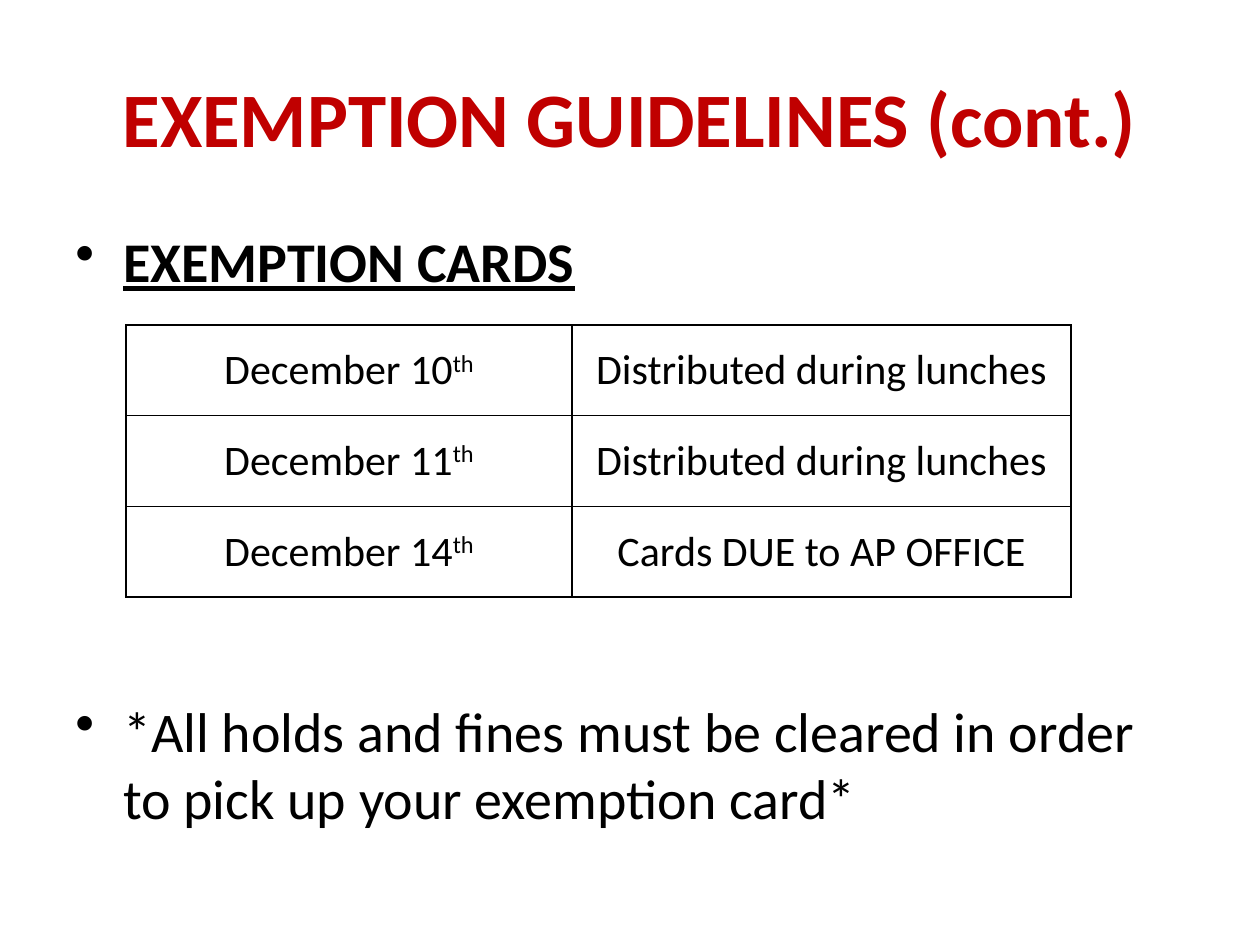
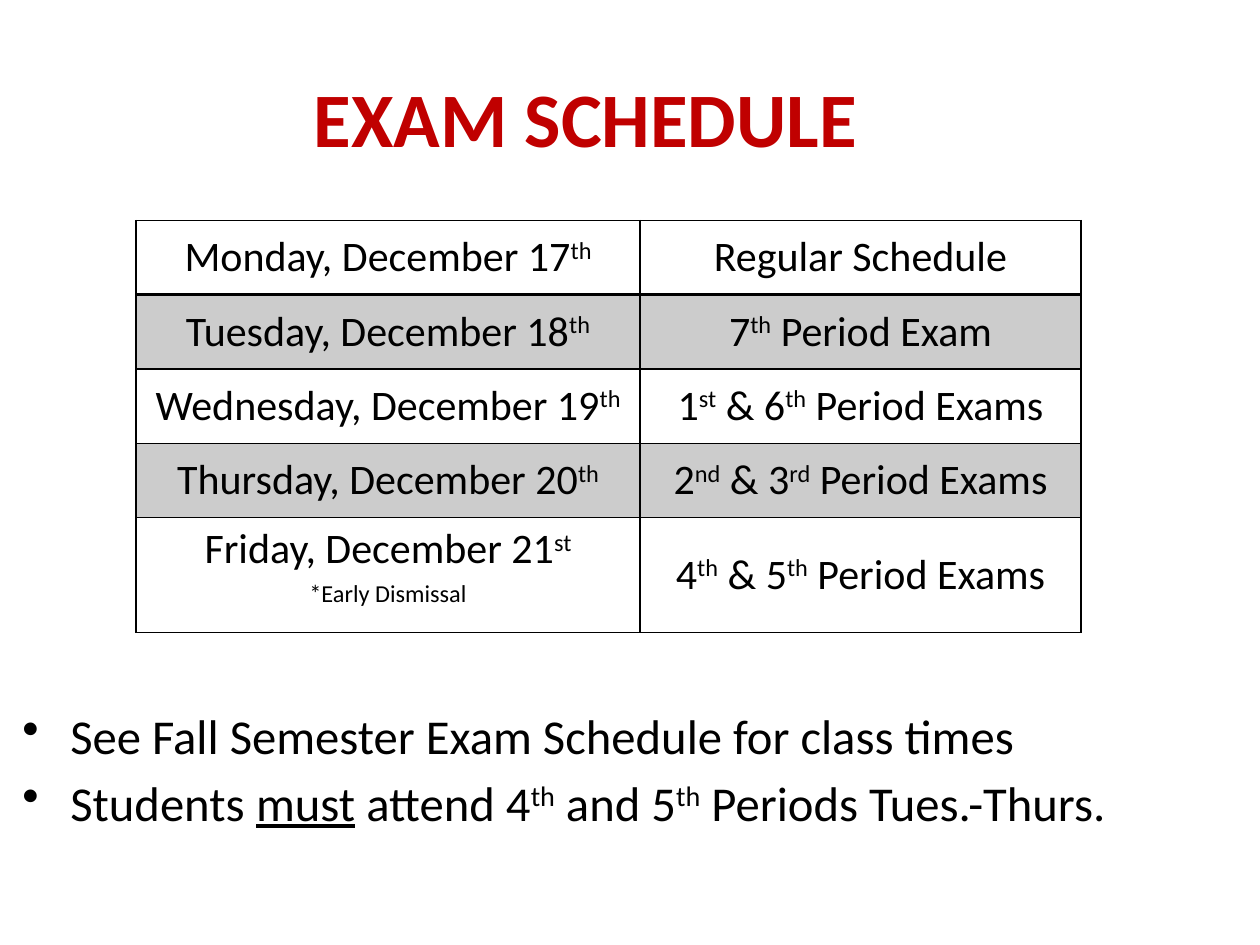
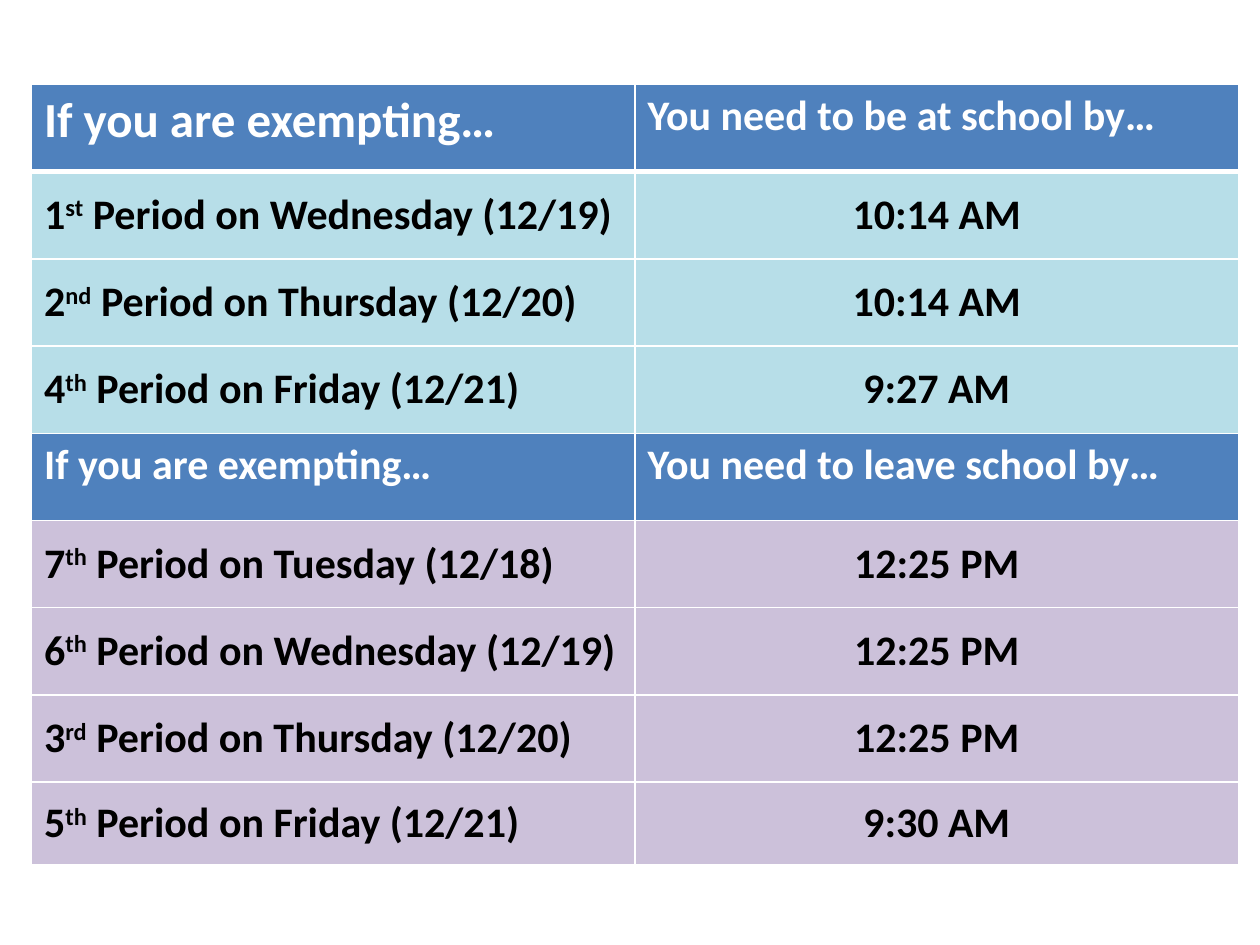
"""Build three slides on exam exemptions: card dates, exam schedule and arrival times."""
from dataclasses import dataclass

from lxml.etree import SubElement
from pptx import Presentation
from pptx.dml.color import RGBColor as RGB
from pptx.enum.text import MSO_ANCHOR as ANCHOR, PP_ALIGN as ALIGN
from pptx.oxml.ns import qn
from pptx.util import Inches, Pt


@dataclass(frozen=True)
class Theme:
    font: str = "Calibri"
    red: str = "C00000"
    black: str = "000000"
    white: str = "FFFFFF"
    grey: str = "CCCCCC"
    blue: str = "4F81BD"
    aqua: str = "B7DEE8"
    lilac: str = "CCC1DA"
    title: float = 44
    body: float = 32
    note: float = 27.8
    head: float = 28
    cell: float = 24


T = Theme()
STYLES = {"^": "superscript", "_": "underline"}

CARD_TITLE = "EXEMPTION GUIDELINES (cont.)"
CARD_BULLETS = [
    "_EXEMPTION CARDS_",
    "*All holds and fines must be cleared in order to pick up your exemption card*",
]
CARD_ROWS = [
    ("December 10^th^", "Distributed during lunches"),
    ("December 11^th^", "Distributed during lunches"),
    ("December 14^th^", "Cards DUE to AP OFFICE"),
]

EXAM_TITLE = "EXAM SCHEDULE"
EXAM_ROWS = [
    ("Monday, December 17^th^", "Regular Schedule"),
    ("Tuesday, December 18^th^", "7^th^ Period Exam"),
    ("Wednesday, December 19^th^", "1^st^ & 6^th^ Period Exams"),
    ("Thursday, December 20^th^", "2^nd^ & 3^rd^ Period Exams"),
    ("Friday, December 21^st^\n^*Early Dismissal^", "4^th^ & 5^th^ Period Exams"),
]
EXAM_BULLETS = [
    "See Fall Semester Exam Schedule for class times",
    "Students _must_ attend 4^th^ and 5^th^ Periods Tues.-Thurs.",
]

ARRIVE_ROWS = [
    ("If you are exempting…", "You need to be at school by…"),
    ("1^st^ Period on Wednesday (12/19)", "10:14 AM"),
    ("2^nd^ Period on Thursday (12/20)", "10:14 AM"),
    ("4^th^ Period on Friday (12/21)", "9:27 AM"),
]
LEAVE_ROWS = [
    ("If you are exempting…", "You need to leave school by…"),
    ("7^th^ Period on Tuesday (12/18)", "12:25 PM"),
    ("6^th^ Period on Wednesday (12/19)", "12:25 PM"),
    ("3^rd^ Period on Thursday (12/20)", "12:25 PM"),
]
LAST_ROW = [("5^th^ Period on Friday (12/21)", "9:30 AM")]


def set_font(p, size, color=T.black, bold=False):
    f = p.font
    f.name, f.size, f.bold = T.font, Pt(size), bold
    f.color.rgb = RGB.from_string(color)


def add_runs(p, text):
    """Write text, where ^ encloses superscript and _ encloses underline."""
    style, part = None, ""
    for ch in text + "\0":
        if ch not in STYLES and ch != "\0":
            part += ch
            continue
        if part:
            r = p.add_run()
            r.text = part
            if style == "underline":
                r.font.underline = True
            elif style == "superscript":
                r.font._element.set("baseline", "30000")
        style, part = (None if style else STYLES.get(ch)), ""


def fill_text(tf, text, size, color=T.black, bold=False, align=ALIGN.LEFT):
    for i, line in enumerate(text.split("\n")):
        p = tf.add_paragraph() if i else tf.paragraphs[0]
        p.alignment = align
        set_font(p, size, color, bold)
        add_runs(p, line)
    return tf.paragraphs


def add_box(s, box):
    tf = s.shapes.add_textbox(*map(Inches, box)).text_frame
    tf.word_wrap = True
    return tf


def add_title(s, text, right_inset=0.1):
    tf = add_box(s, (0.5, 0.3, 9, 1.25))
    tf.vertical_anchor = ANCHOR.MIDDLE
    tf.margin_right = Inches(right_inset)
    fill_text(tf, text, T.title, T.red, True, ALIGN.CENTER)


def add_bullets(s, box, lines, size, gap, top_inset=0.05, bold_first=False):
    tf = add_box(s, box)
    tf.margin_top = Inches(top_inset)
    for i, p in enumerate(fill_text(tf, "\n".join(lines), size)):
        p.font.bold = bold_first and i == 0
        if i:
            p.space_before = Pt(gap)
        pPr = p._p.get_or_add_pPr()
        pPr.set("marL", str(Inches(0.38)))
        pPr.set("indent", str(-Inches(0.38)))
        bullet = pPr.makeelement(qn("a:buChar"), {"char": "•"})
        pPr.find(qn("a:defRPr")).addprevious(bullet)


def set_borders(cell, color, top, bottom):
    tcPr = cell._tc.get_or_add_tcPr()
    for side, width in (("L", 1), ("R", 1), ("T", top), ("B", bottom)):
        ln = SubElement(tcPr, qn(f"a:ln{side}"), w=str(Pt(width)))
        fill = SubElement(ln, qn("a:solidFill"))
        SubElement(fill, qn("a:srgbClr"), val=color)


def add_grid(s, at, widths, heights, rows, fills, line, head_rule=1,
             bold=False, aligns=(ALIGN.CENTER, ALIGN.CENTER)):
    box = (*at, sum(widths), sum(heights))
    table = s.shapes.add_table(len(rows), len(widths), *map(Inches, box)).table
    table.first_row = table.horz_banding = False
    for col, width in zip(table.columns, widths):
        col.width = Inches(width)
    for i, (row, fill) in enumerate(zip(rows, fills)):
        table.rows[i].height = Inches(heights[i])
        header = fill == T.blue
        for j, text in enumerate(row):
            cell = table.cell(i, j)
            set_borders(cell, line, head_rule if i == 1 else 1, head_rule if i == 0 else 1)
            cell.fill.solid()
            cell.fill.fore_color.rgb = RGB.from_string(fill)
            cell.vertical_anchor = ANCHOR.TOP if header else ANCHOR.MIDDLE
            fill_text(cell.text_frame, text,
                      T.head if header and i == j == 0 else T.cell,
                      T.white if header else T.black, bold,
                      ALIGN.LEFT if header else aligns[j])


def cards_slide(s):
    add_title(s, CARD_TITLE)
    add_bullets(s, (0.5, 1.75, 9, 4.95), CARD_BULLETS, T.body, 230, bold_first=True)
    add_grid(s, (1, 2.58), (3.54, 3.96), [0.72] * 3, CARD_ROWS, [T.white] * 3, T.black)


def exams_slide(s):
    add_title(s, EXAM_TITLE, right_inset=0.8)
    add_bullets(s, (0.08, 1.5, 9.42, 5.5), EXAM_BULLETS, T.note, 5, top_inset=4.1)
    fills = [T.grey if i % 2 else T.white for i in range(len(EXAM_ROWS))]
    add_grid(s, (1.08, 1.75), (4, 3.5), [0.59] * 4 + [0.91], EXAM_ROWS, fills,
             T.black, head_rule=2)


def times_slide(s):
    left, top, widths = 0.25, 0.67, (4.79, 4.79)
    rows = ARRIVE_ROWS + LEAVE_ROWS
    heights = [5.54 / len(rows)] * len(rows)
    fills = [T.blue] + [T.aqua] * 3 + [T.blue] + [T.lilac] * 3
    look = dict(line=T.white, bold=True, aligns=(ALIGN.LEFT, ALIGN.CENTER))
    add_grid(s, (left, top), widths, heights, rows, fills, head_rule=3, **look)
    add_grid(s, (left, top + sum(heights)), widths, [0.65], LAST_ROW, [T.lilac], **look)


def main():
    prs = Presentation()
    prs.slide_width, prs.slide_height = Inches(10), Inches(7.5)
    for build in (cards_slide, exams_slide, times_slide):
        build(prs.slides.add_slide(prs.slide_layouts[6]))
    prs.save("out.pptx")


if __name__ == "__main__":
    main()
